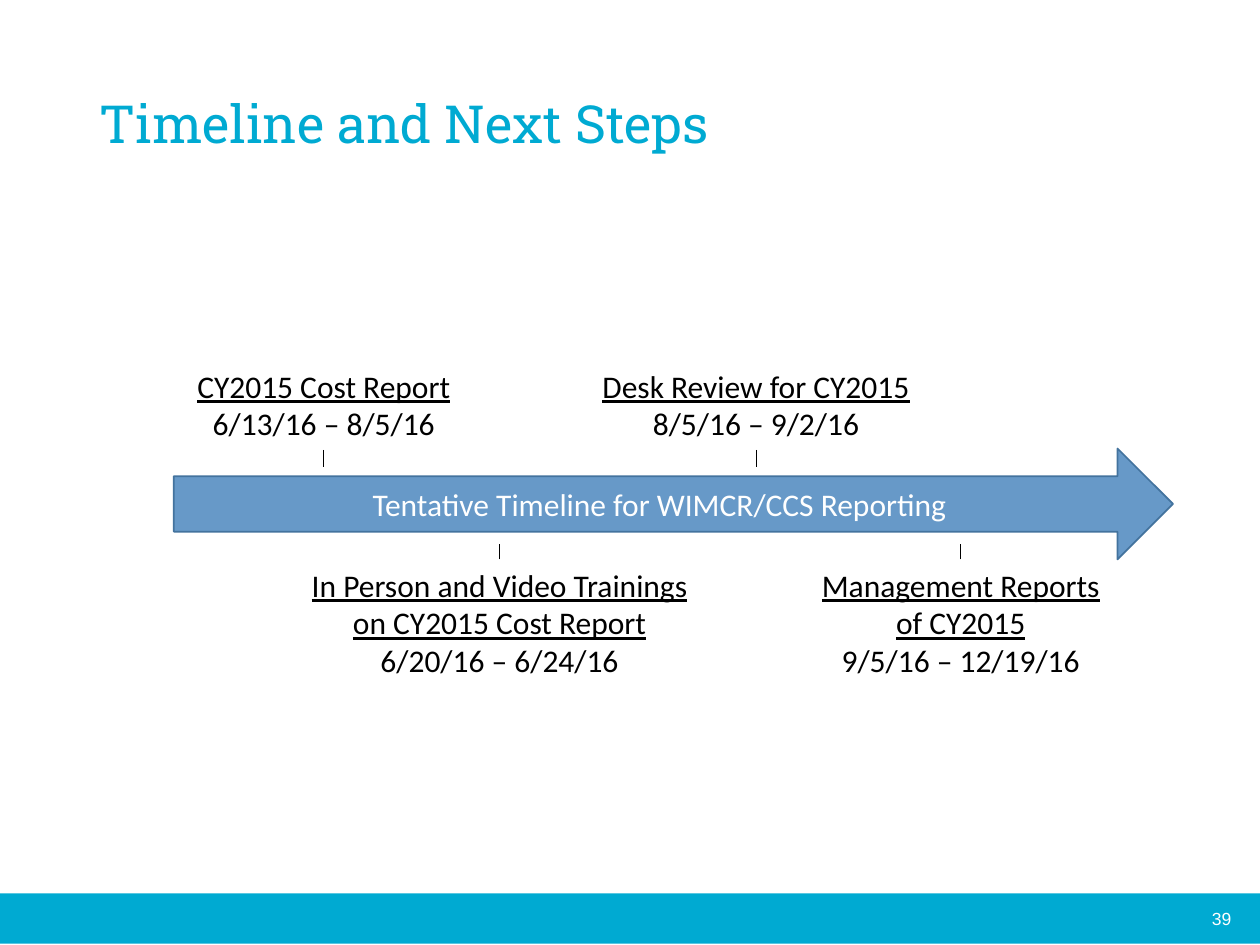
from pptx import Presentation
from pptx.dml.color import RGBColor
from pptx.enum.shapes import MSO_CONNECTOR, MSO_SHAPE
from pptx.enum.text import MSO_ANCHOR, MSO_AUTO_SIZE, PP_ALIGN
from pptx.oxml.ns import qn
from pptx.util import Inches, Pt
from lxml import etree

RECT, ARROW = MSO_SHAPE.RECTANGLE, MSO_SHAPE.RIGHT_ARROW
LINE = MSO_CONNECTOR.STRAIGHT
LEFT, CENTER, RIGHT = PP_ALIGN.LEFT, PP_ALIGN.CENTER, PP_ALIGN.RIGHT
MIDDLE = MSO_ANCHOR.MIDDLE
GROW = MSO_AUTO_SIZE.SHAPE_TO_FIT_TEXT
TOP, BOTTOM = 0, 2

CYAN = RGBColor(0x00, 0xAA, 0xD2)
BLUE = RGBColor(0x67, 0x99, 0xC8)
EDGE = RGBColor(0x43, 0x73, 0x9E)
BLACK = RGBColor(0, 0, 0)
WHITE = RGBColor(255, 255, 255)

# Stage, dates, left, width
ABOVE = [
    ("CY2015 Cost Report", "6/13/16 – 8/5/16", 1.38, 2.38),
    ("Desk Review for CY2015", "8/5/16 – 9/2/16", 4.59, 2.82),
]
BELOW = [
    ("In Person and Video Trainings on CY2015 Cost Report",
     "6/20/16 – 6/24/16", 2.27, 3.39),
    ("Management Reports of CY2015", "9/5/16 – 12/19/16", 6.35, 2.55),
]


class Board:
    def __init__(self, slide):
        self.shapes = slide.shapes
        self.font, self.size = "Calibri", 18

    def style(self, para, color, align=CENTER, font=None, size=None):
        para.alignment = align
        para.font.name = font or self.font
        para.font.size = Pt(size or self.size)
        para.font.color.rgb = color

    def block(self, kind, box, fill, edge=None):
        shape = self.shapes.add_shape(kind, *map(Inches, box))
        shape.shadow.inherit = False
        shape.fill.solid()
        shape.fill.fore_color.rgb = fill
        if edge:
            shape.line.color.rgb = edge
            shape.line.width = Pt(1)
        else:
            shape.line.fill.background()
        return shape

    def arrow(self, box, text):
        shape = self.block(ARROW, box, BLUE, EDGE)
        shape.text_frame.vertical_anchor = MIDDLE
        para = shape.text_frame.paragraphs[0]
        para.text = text
        self.style(para, WHITE)

    def text(self, box, lines, color, **look):
        shape = self.shapes.add_textbox(*map(Inches, box))
        frame = shape.text_frame
        frame.word_wrap = True
        frame.text = "\n".join(lines)
        for para in frame.paragraphs:
            self.style(para, color, **look)
        return shape

    def tick(self, shape, site, x, start, end):
        """Join a short line to the middle of a label's side."""
        line = self.shapes.add_connector(
            LINE, *map(Inches, (x, start, x, end)))
        line.begin_connect(shape, site)
        line.line.color.rgb = BLACK
        line.line.width = Pt(0.5)
        etree.SubElement(line._element.spPr, qn("a:effectLst"))

    def stage(self, name, dates, left, width, top, high, site, end):
        """Add a label with its tick towards the arrow."""
        label = self.text((left, top, width, high), (name, dates), BLACK)
        label.text_frame.auto_size = GROW
        label.text_frame.paragraphs[0].font.underline = True
        start = top if site == TOP else top + high
        self.tick(label, site, left + width / 2, start, end)


def main():
    deck = Presentation()
    deck.slide_width, deck.slide_height = Inches(10), Inches(7.5)
    board = Board(deck.slides.add_slide(deck.slide_layouts[6]))

    board.block(RECT, (0, 7.09, 10, 0.4), CYAN)
    title = board.text((0.69, 0.73, 8.62, 0.99), ["Timeline and Next Steps"],
                       CYAN, align=LEFT, font="Roboto Slab", size=30)
    title.text_frame.paragraphs[0].line_spacing = 0.9
    board.arrow((1.38, 3.56, 7.93, 0.88),
                "Tentative Timeline for WIMCR/CCS Reporting")
    for item in ABOVE:
        board.stage(*item, top=2.86, high=0.71, site=BOTTOM, end=3.71)
    for item in BELOW:
        board.stage(*item, top=4.44, high=1.01, site=TOP, end=4.32)
    board.text((7.62, 7.16, 2.25, 0.2), ["39"], WHITE,
               align=RIGHT, font="Arial", size=10)
    deck.save("out.pptx")


if __name__ == "__main__":
    main()
